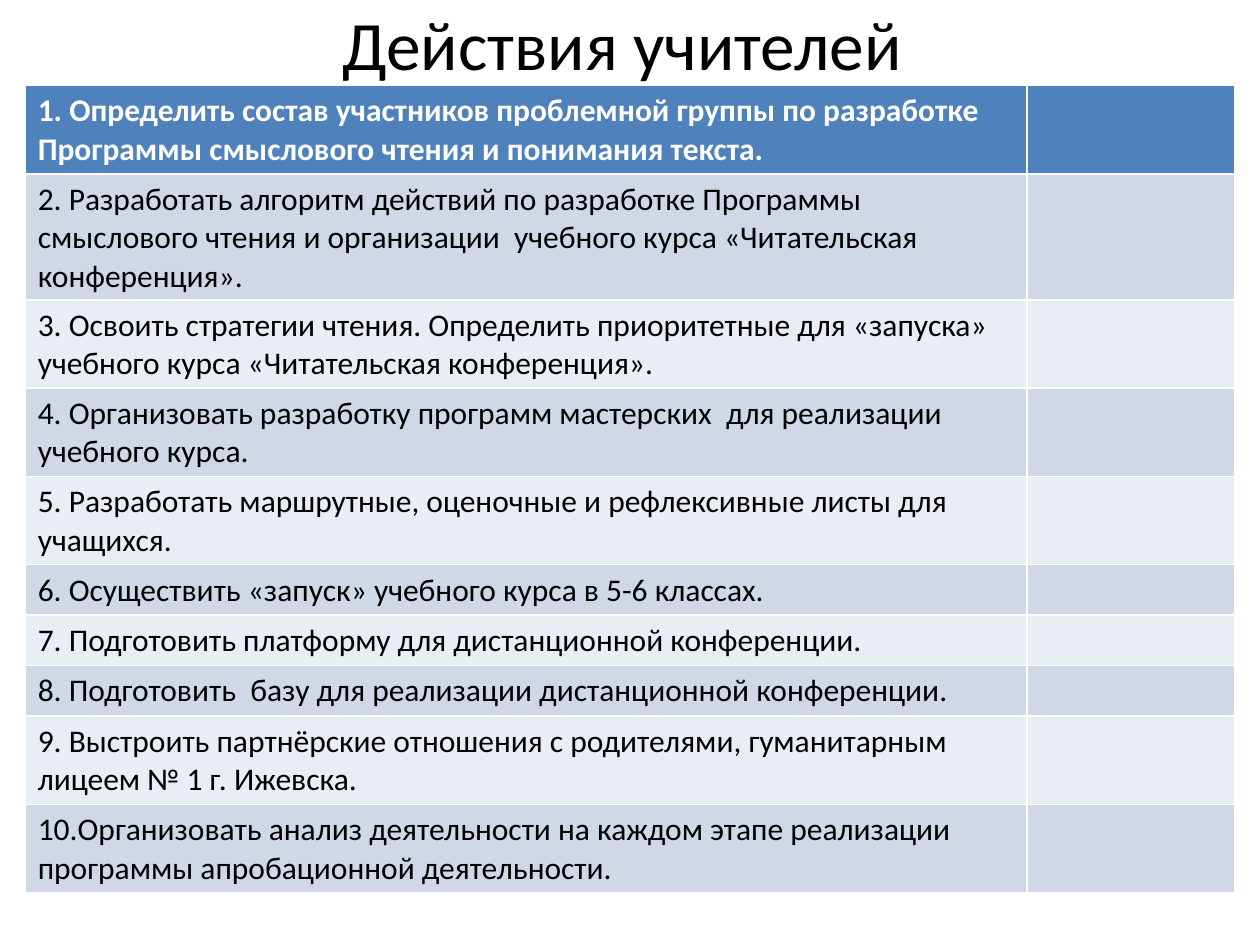
"""Build a slide with a title and a table of ten teacher actions."""
import pptx
import pptx.util
import pptx.dml.color
import pptx.enum.text

theme = {
    "font": "Calibri",
    "title": 39.6,
    "body": 18,
    "ink": "000000",
    "light": "FFFFFF",
    "head": "4F81BD",
    "bands": ("E9EDF4", "D0D8E8"),
}

tasks = (
    (2, "1. Определить состав участников проблемной группы по разработке Программы смыслового чтения и понимания текста."),
    (3, "2. Разработать алгоритм действий по разработке Программы смыслового чтения и организации  учебного курса «Читательская конференция»."),
    (2, "3. Освоить стратегии чтения. Определить приоритетные для «запуска» учебного курса «Читательская конференция»."),
    (2, "4. Организовать разработку программ мастерских  для реализации учебного курса."),
    (2, "5. Разработать маршрутные, оценочные и рефлексивные листы для учащихся."),
    (1, "6. Осуществить «запуск» учебного курса в 5-6 классах."),
    (1, "7. Подготовить платформу для дистанционной конференции."),
    (1, "8. Подготовить  базу для реализации дистанционной конференции."),
    (2, "9. Выстроить партнёрские отношения с родителями, гуманитарным лицеем № 1 г. Ижевска."),
    (2, "10.Организовать анализ деятельности на каждом этапе реализации программы апробационной деятельности."),
)


def color(code):
    return pptx.dml.color.RGBColor.from_string(code)


def write(para, text, size, code, bold=False):
    run = para.add_run()
    run.text = text
    run.font.name = theme["font"]
    run.font.size = pptx.util.Pt(size)
    run.font.bold = bold
    run.font.color.rgb = color(code)


deck = pptx.Presentation()
deck.slide_width = wide = pptx.util.Inches(10)
deck.slide_height = pptx.util.Inches(7.5)
slide = deck.slides.add_slide(deck.slide_layouts[6])

top = pptx.util.Inches(0.68)
title = slide.shapes.add_textbox(int(wide * 0.05), 0, int(wide * 0.9), top)
frame = title.text_frame
frame.word_wrap = True
frame.margin_top = frame.margin_bottom = 0
frame.vertical_anchor = pptx.enum.text.MSO_ANCHOR.MIDDLE
frame.paragraphs[0].alignment = pptx.enum.text.PP_ALIGN.CENTER
write(frame.paragraphs[0], "Действия учителей ", theme["title"], theme["ink"])

pad = pptx.util.Inches(0.1)
line = pptx.util.Inches(0.28)
tall = [pad + line * count for count, text in tasks]
cols = [int(wide * share) for share in (0.795, 0.165)]
grid = slide.shapes.add_table(
    len(tasks), len(cols), int(wide * 0.02), top, sum(cols), sum(tall)
).table
for col, width in zip(grid.columns, cols):
    col.width = width

for row, (count, text) in enumerate(tasks):
    grid.rows[row].height = tall[row]
    first = row == 0
    fill = theme["head"] if first else theme["bands"][row % 2]
    for cell in grid.rows[row].cells:
        cell.fill.solid()
        cell.fill.fore_color.rgb = color(fill)
    ink = theme["light"] if first else theme["ink"]
    para = grid.cell(row, 0).text_frame.paragraphs[0]
    write(para, text, theme["body"], ink, first)

deck.save("out.pptx")
